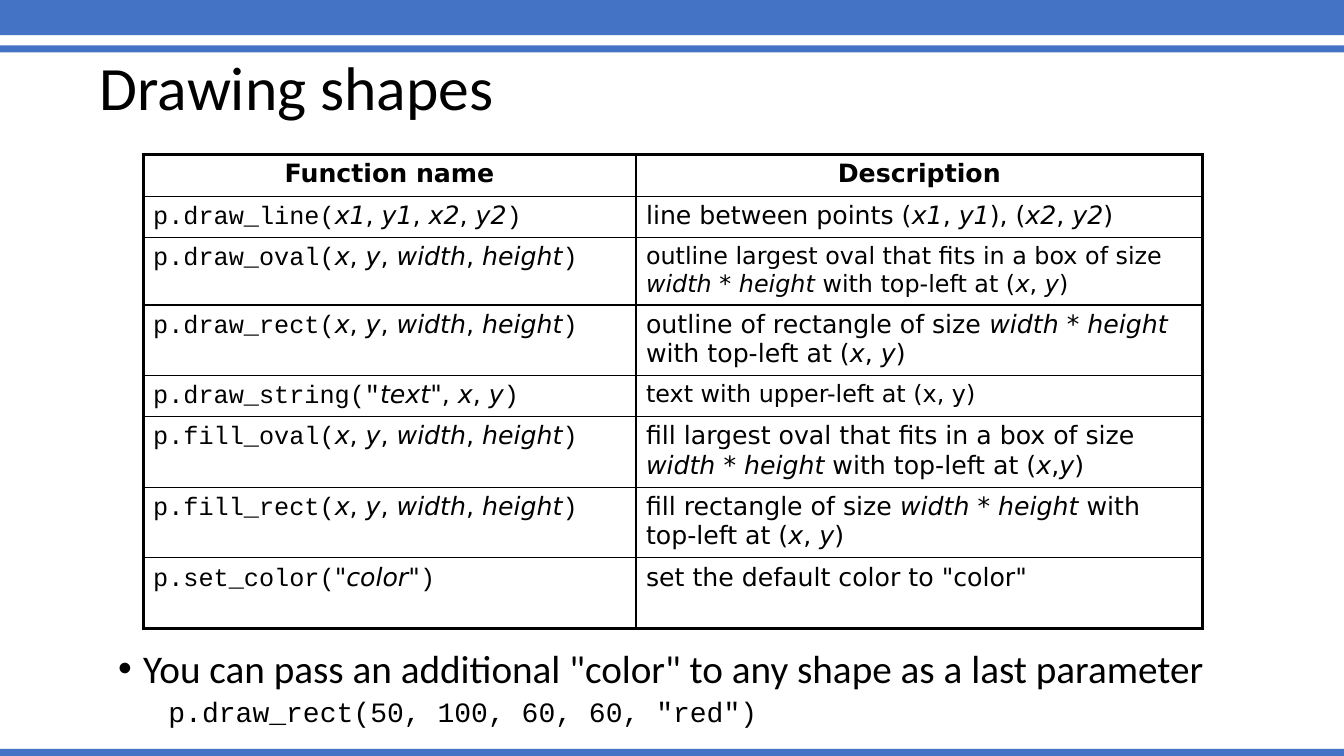
from lxml.etree import SubElement
from pptx import Presentation
from pptx.dml.color import RGBColor
from pptx.enum.shapes import MSO_SHAPE
from pptx.enum.text import MSO_ANCHOR, MSO_AUTO_SIZE, PP_ALIGN
from pptx.oxml.ns import qn
from pptx.util import Inches, Pt

BLUE = RGBColor(0x44, 0x72, 0xC4)
BLACK = RGBColor(0, 0, 0)
SANS, MONO, HEADING = "DejaVu Sans", "Courier New", "Calibri"
WIDTH, HEIGHT = Inches(13.33), Inches(7.5)
THIN, THICK = Pt(1), Pt(2.25)

BARS = [(0, 4.67), (6, 0.93), (99.07, 0.93)]
COLUMNS = [36.67, 42.16]
HEADERS = ["Function name", "Description"]
HEADER_ROW = 5.6
BOX = ["x", "y", "width", "height"]
FUNCTIONS = [
    ("p.draw_line(", ["x1", "y1", "x2", "y2"],
     "line between points (|x1|, |y1|), (|x2|, |y2|)", 18, 5.33),
    ("p.draw_oval(", BOX,
     "outline largest oval that fits in a box of size |width |* |height| with top-left at (|x|, |y|)", 17, 8.93),
    ("p.draw_rect(", BOX,
     "outline of rectangle of size |width| * |height| with top-left at (|x|, |y|)", 18, 9.33),
    ('p.draw_string("', ['text"', "x", "y"],
     "text with upper-left at (x, y)", 17, 5.33),
    ("p.fill_oval(", BOX,
     "fill largest oval that fits in a box of size |width |* |height| with top-left at (|x|,|y|)", 18, 9.33),
    ("p.fill_rect(", BOX,
     "fill rectangle of size |width| * |height| with top-left at (|x|, |y|)", 18, 9.33),
    ("p.set_color(", ['"color"'],
     'set the default color to "color"', 18, 9.33),
]


def across(percent):
    return int(WIDTH * percent / 100)


def down(percent):
    return int(HEIGHT * percent / 100)


def box(left, top, width, height):
    return across(left), down(top), across(width), down(height)


def place(sp, left, top, width, height):
    sp.left, sp.top, sp.width, sp.height = box(left, top, width, height)


def style(r, font, size, italic=False, bold=False):
    r.font.name = font
    r.font.size = Pt(size)
    r.font.italic = italic
    r.font.bold = bold
    r.font.color.rgb = BLACK


def add_bar(s, top, height):
    sp = s.shapes.add_shape(MSO_SHAPE.RECTANGLE, *box(0, top, 100, height))
    sp.shadow.inherit = False
    sp.fill.solid()
    sp.fill.fore_color.rgb = BLUE
    sp.line.fill.background()
    s.shapes._spTree.insert(2, sp._element)


def add_title(s, text):
    sp = s.shapes.title
    place(sp, 6.67, 2.27, 86.25, 19.33)
    tf = sp.text_frame
    tf.text = text
    tf.auto_size = MSO_AUTO_SIZE.NONE
    tf.vertical_anchor = MSO_ANCHOR.MIDDLE
    p = tf.paragraphs[0]
    p.alignment = PP_ALIGN.LEFT
    p.line_spacing = 0.9
    style(p.runs[0], HEADING, 44)


def write_parts(p, parts, size):
    for text, font, italic in parts:
        r = p.add_run()
        r.text = text
        style(r, font, size, italic)


def write_call(p, name, arguments):
    parts = [(name, MONO, False)]
    for i, argument in enumerate(arguments):
        if i:
            parts.append((", ", SANS, False))
        parts.append((argument, SANS, True))
    write_parts(p, parts + [(")", MONO, False)], 18)


def write_description(p, text, size):
    parts = [(part, SANS, i % 2 == 1) for i, part in enumerate(text.split("|"))]
    write_parts(p, parts, size)


def write_header(p, text):
    p.text = text
    p.alignment = PP_ALIGN.CENTER
    style(p.runs[0], SANS, 18, bold=True)


def add_borders(cell, outer):
    tcPr = cell._tc.get_or_add_tcPr()
    for side in "LRTB":
        width = THICK if side in outer else THIN
        ln = SubElement(tcPr, qn(f"a:ln{side}"), w=str(int(width)))
        fill = SubElement(ln, qn("a:solidFill"))
        SubElement(fill, qn("a:srgbClr"), val=str(BLACK))
    cell.fill.background()


def add_function_table(s):
    rows, cols = len(FUNCTIONS) + 1, len(COLUMNS)
    heights = [HEADER_ROW] + [row[-1] for row in FUNCTIONS]
    frame = s.shapes.add_table(rows, cols, *box(10.65, 20.4, sum(COLUMNS), sum(heights)))
    table = frame.table
    table.first_row = table.horz_banding = False
    for column, width in zip(table.columns, COLUMNS):
        column.width = across(width)
    for row, height in zip(table.rows, heights):
        row.height = down(height)
    for i in range(rows):
        for j in range(cols):
            outer = "LR"[j] + ("T" if i == 0 else "B" if i == rows - 1 else "")
            add_borders(table.cell(i, j), outer)
    for j, text in enumerate(HEADERS):
        write_header(table.cell(0, j).text_frame.paragraphs[0], text)
    for i, (name, arguments, text, size, _) in enumerate(FUNCTIONS, 1):
        write_call(table.cell(i, 0).text_frame.paragraphs[0], name, arguments)
        write_description(table.cell(i, 1).text_frame.paragraphs[0], text, size)


def format_item(p, font, size, before, margin, indent, bullet=None):
    p.line_spacing = 0.9
    p.space_before = Pt(before)
    pPr = p._p.get_or_add_pPr()
    pPr.set("marL", str(Inches(margin)))
    pPr.set("indent", str(Inches(indent)))
    if bullet:
        SubElement(pPr, qn("a:buFont"), typeface="Arial")
        SubElement(pPr, qn("a:buChar"), char=bullet)
    else:
        SubElement(pPr, qn("a:buNone"))
    style(p.runs[0], font, size)


def add_note(s, text, example):
    sp = s.placeholders[1]
    place(sp, 8.03, 85.2, 86.25, 14.8)
    tf = sp.text_frame
    tf.auto_size = MSO_AUTO_SIZE.NONE
    tf.text = text
    format_item(tf.paragraphs[0], HEADING, 28, 10, 0.25, -0.25, "•")
    p = tf.add_paragraph()
    p.text = example
    p.level = 1
    format_item(p, MONO, 20, 5, 0.5, 0)


def main():
    prs = Presentation()
    prs.slide_width, prs.slide_height = WIDTH, HEIGHT
    s = prs.slides.add_slide(prs.slide_layouts[1])
    for top, height in BARS:
        add_bar(s, top, height)
    add_title(s, "Drawing shapes")
    add_function_table(s)
    add_note(s, 'You can pass an additional "color" to any shape as a last parameter',
             'p.draw_rect(50, 100, 60, 60, "red")')
    prs.save("out.pptx")


if __name__ == "__main__":
    main()
